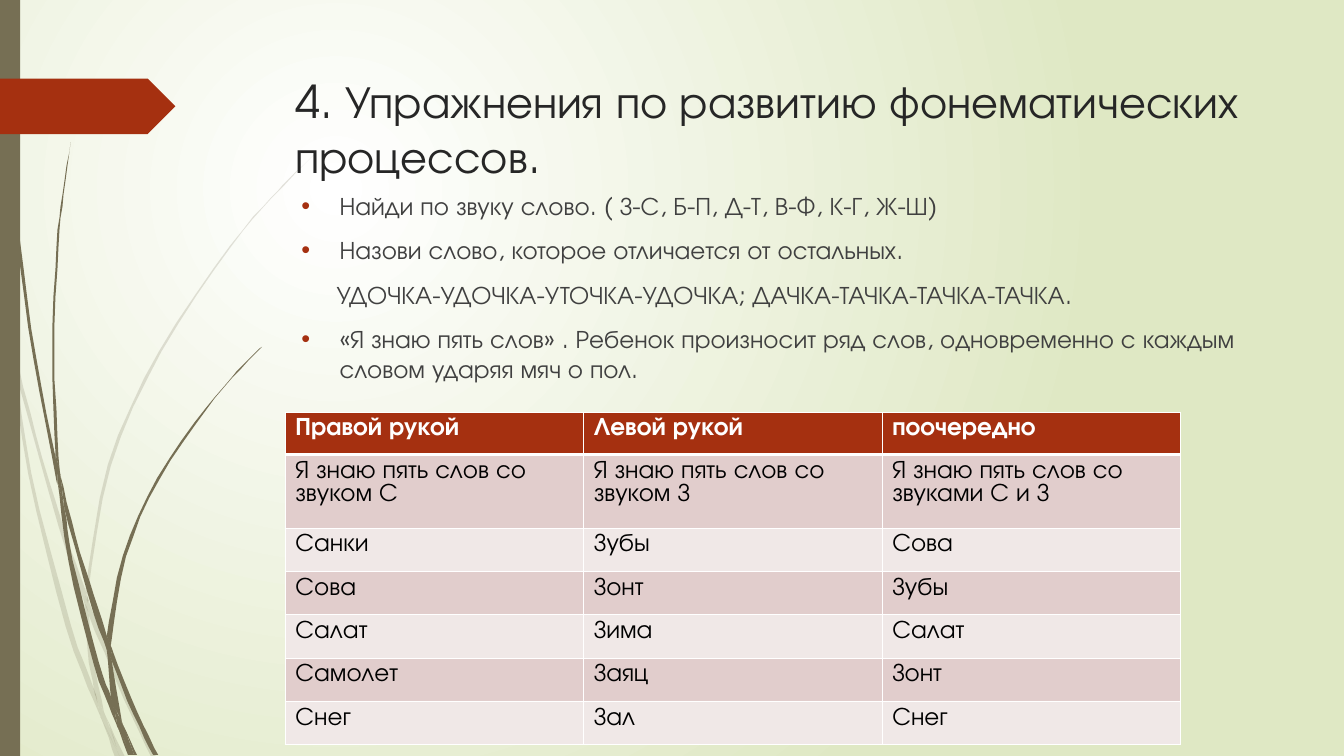
"""Builds a slide on exercises for phonemic hearing."""
from lxml import etree
from pptx import Presentation
from pptx.dml.color import RGBColor
from pptx.enum.shapes import MSO_SHAPE
from pptx.enum.text import MSO_ANCHOR
from pptx.oxml import parse_xml
from pptx.oxml.ns import nsdecls, qn
from pptx.util import Pt

RECT, ARROW = MSO_SHAPE.RECTANGLE, MSO_SHAPE.PENTAGON
TOP = MSO_ANCHOR.TOP
PX = 9144
FACE = "TeX Gyre Adventor"
OLIVE, RUST, WHITE = "766F54", "A53010", "FFFFFF"


def paint(item, color):
    item.fill.solid()
    item.fill.fore_color.rgb = RGBColor.from_string(color)


def smooth(knots):
    ring = [knots[0], *knots, knots[-1]]
    dots = [knots[0]]
    for a, b, c, d in zip(ring, ring[1:], ring[2:], ring[3:]):
        for t in (0.25, 0.5, 0.75, 1):
            dots.append(tuple(
                0.5 * (2 * q + (r - p) * t + (2 * p - 5 * q + 4 * r - s) * t ** 2
                       + (3 * q - p - 3 * r + s) * t ** 3)
                for p, q, r, s in zip(a, b, c, d)))
    return dots


deck = Presentation()
deck.slide_width, deck.slide_height = 1333 * PX, 750 * PX
slide = deck.slides.add_slide(deck.slide_layouts[6])
shapes = slide.shapes

slide.background.fill.solid()
back = slide.element.find(".//" + qn("p:bgPr"))
back.replace(back[0], parse_xml(
    f'<a:gradFill {nsdecls("a")} rotWithShape="1"><a:gsLst>'
    '<a:gs pos="0"><a:srgbClr val="FFFFFF"/></a:gs>'
    '<a:gs pos="100000"><a:srgbClr val="DFE8C4"/></a:gs></a:gsLst>'
    '<a:path path="circle"><a:fillToRect l="50000" t="50000" r="100000" b="100000"/>'
    '</a:path></a:gradFill>'))

pale = [
    ([(0, 282), (9, 322), (11, 350)], [(10, 344), (0, 299)]),
    ([(14, 345), (36, 433), (62, 520), (85, 586)], [(84, 599), (58, 522), (17, 376)]),
    ([(88, 596), (92, 607), (127, 692), (155, 751)], [(150, 751), (123, 694), (88, 610)]),
    ([(105, 711), (124, 751)], [(119, 751), (105, 711)]),
    ([(11, 350), (17, 376), (31, 469), (70, 619), (93, 683), (99, 707), (101, 714)],
     [(92, 693), (65, 621), (28, 470), (11, 350)]),
    ([(84, 599), (87, 646), (93, 683), (96, 692), (105, 711)],
     [(103, 706), (91, 646), (88, 610), (84, 599)]),
    ([(312, 153), (289, 175), (268, 197), (228, 244), (158, 348), (107, 461), (85, 584)],
     [(88, 596), (88, 584), (110, 462), (160, 349), (229, 245), (268, 198), (312, 153)]),
    ([(101, 714), (114, 751)], [(119, 751), (101, 714)]),
    ([(85, 586), (88, 596), (88, 610)], [(88, 608), (84, 599)]),
    ([(93, 683), (96, 692), (105, 711), (119, 751)], [(101, 714), (99, 707), (93, 683)]),
]
dark = [
    ([(4, 0), (5, 48), (8, 109), (19, 232), (36, 355), (55, 453), (57, 481)],
     [(56, 477), (33, 355), (17, 233), (7, 110), (4, 48), (3, 0)]),
    ([(60, 472), (75, 532), (93, 590), (106, 631)], [(106, 645), (88, 592), (64, 505)]),
    ([(110, 641), (113, 649), (136, 706), (157, 749)], [(152, 749), (132, 708), (111, 656)]),
    ([(57, 477), (64, 505), (72, 556), (98, 657), (110, 691), (116, 717), (117, 722)],
     [(111, 708), (93, 659), (68, 557), (57, 477)]),
    ([(70, 141), (62, 193), (56, 245), (52, 349), (55, 449)],
     [(60, 472), (58, 453), (54, 349), (58, 245), (63, 193), (70, 141)]),
    ([(122, 719), (136, 749)], [(133, 749), (122, 719)]),
    ([(55, 449), (60, 472), (64, 505)], [(57, 477), (55, 453)]),
    ([(260, 344), (245, 358), (231, 373), (204, 405), (156, 474), (122, 551), (106, 631)],
     [(110, 641), (111, 633), (125, 552), (158, 476), (205, 406), (231, 374), (260, 344)]),
    ([(117, 722), (127, 749)], [(131, 749), (117, 722)]),
    ([(106, 645), (110, 691), (116, 706), (122, 719)], [(121, 716), (111, 656), (106, 645)]),
    ([(106, 631), (110, 641), (111, 656)], [(109, 651), (106, 645)]),
    ([(110, 691), (116, 706), (122, 719), (133, 749)],
     [(130, 749), (117, 722), (116, 717), (110, 691)]),
]
for blades, alpha in ((pale, 20), (dark, 100)):
    for near, far in blades:
        dots = smooth(near) + smooth(far)
        pen = shapes.build_freeform(*dots[0], scale=PX)
        pen.add_line_segments(dots[1:])
        blade = pen.convert_to_shape()
        blade.shadow.inherit = False
        blade.line.fill.background()
        paint(blade, OLIVE)
        tint = blade.element.spPr.find(".//" + qn("a:srgbClr"))
        etree.SubElement(tint, qn("a:alpha"), val=str(alpha * 1000))

for kind, top, wide, high, color in ((RECT, 0, 20, 750, OLIVE), (ARROW, 78, 174, 55, RUST)):
    bar = shapes.add_shape(kind, 0, top * PX, wide * PX, high * PX)
    bar.shadow.inherit = False
    bar.line.fill.background()
    paint(bar, color)

heading = ["4. Упражнения по развитию фонематических процессов."]
tasks = [
    "Найди по звуку слово. ( З-С, Б-П, Д-Т, В-Ф, К-Г, Ж-Ш)",
    "Назови слово, которое отличается от остальных.",
    "УДОЧКА-УДОЧКА-УТОЧКА-УДОЧКА; ДАЧКА-ТАЧКА-ТАЧКА-ТАЧКА.",
    "«Я знаю пять слов» . Ребенок произносит ряд слов, одновременно с каждым "
    "словом ударяя мяч о пол.",
]
for lines, left, top, high, size, color, marks in (
        (heading, 283, 68, 140, 32.4, "262626", ()),
        (tasks, 289, 184, 450, 18, "404040", (0, 1, 3))):
    frame = shapes.add_textbox(left * PX, top * PX, 975 * PX, high * PX).text_frame
    frame.word_wrap = True
    frame.vertical_anchor = TOP
    for i, line in enumerate(lines):
        para = frame.paragraphs[0] if i == 0 else frame.add_paragraph()
        para.text = line
        props = para._p.get_or_add_pPr()
        if i:
            para.space_before = Pt(10)
        if i in marks:
            props.set("marL", str(38 * PX))
            props.set("indent", str(-38 * PX))
            tint = etree.SubElement(props, qn("a:buClr"))
            etree.SubElement(tint, qn("a:srgbClr"), val=RUST)
            etree.SubElement(props, qn("a:buFont"), typeface="Arial")
            etree.SubElement(props, qn("a:buChar"), char="•")
        elif marks:
            props.set("marL", str(35 * PX))
        font = para.runs[0].font
        font.name, font.size = FACE, Pt(size)
        font.color.rgb = RGBColor.from_string(color)

rows = [
    ("Правой рукой", "Левой рукой", "поочередно"),
    ("Я знаю пять слов со звуком С", "Я знаю пять слов со звуком З",
     "Я знаю пять слов со звуками С и З"),
    ("Санки", "Зубы", "Сова"),
    ("Сова", "Зонт", "Зубы"),
    ("Салат", "Зима", "Салат"),
    ("Самолет", "Заяц", "Зонт"),
    ("Снег", "Зал", "Снег"),
]
highs = [42, 73] + [43] * 5
table = shapes.add_table(7, 3, 283 * PX, 409 * PX, 888 * PX, sum(highs) * PX).table
for col in table.columns:
    col.width = 296 * PX
for r, words in enumerate(rows):
    table.rows[r].height = highs[r] * PX
    for c, word in enumerate(words):
        cell = table.cell(r, c)
        cell.text = word
        paint(cell, RUST if r == 0 else ("F0E8E7", "E1CDCC")[r % 2])
        font = cell.text_frame.paragraphs[0].runs[0].font
        font.name, font.size, font.bold = FACE, Pt(18), r == 0
        font.color.rgb = RGBColor.from_string(WHITE if r == 0 else "000000")
        props = cell._tc.get_or_add_tcPr()
        for i, side in enumerate("LRTB"):
            thick = 3 if (r, side) in ((0, "B"), (1, "T")) else 1
            props.insert(i, parse_xml(
                f'<a:ln{side} {nsdecls("a")} w="{Pt(thick)}"><a:solidFill>'
                f'<a:srgbClr val="{WHITE}"/></a:solidFill></a:ln{side}>'))

deck.save("out.pptx")
